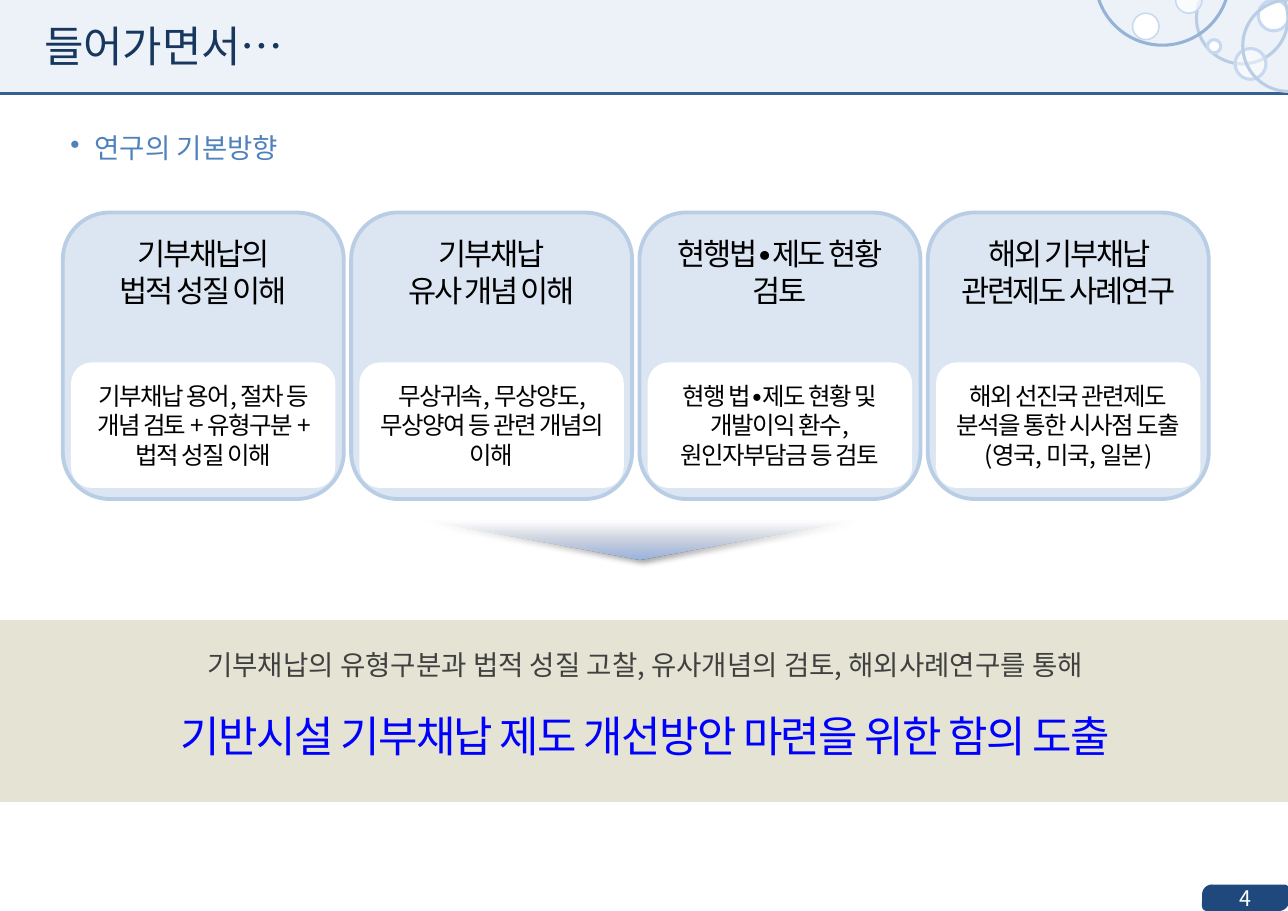
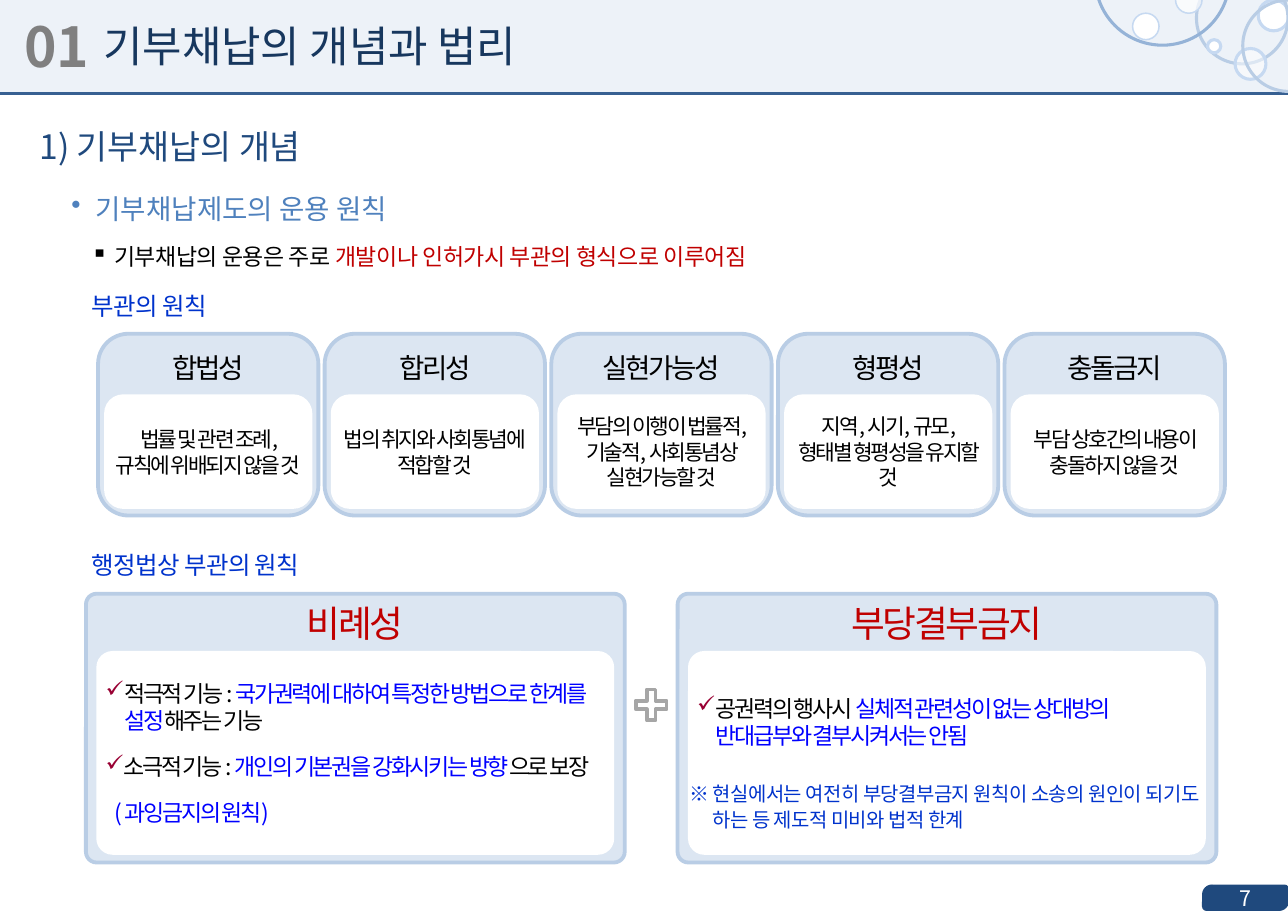
from pptx import Presentation
from pptx.dml.color import RGBColor
from pptx.enum.shapes import MSO_CONNECTOR, MSO_SHAPE
from pptx.enum.text import MSO_ANCHOR, PP_ALIGN
from pptx.oxml import parse_xml
from pptx.oxml.ns import qn
from pptx.util import Inches, Pt
from lxml import etree

RECT, ROUND, OVAL = MSO_SHAPE.RECTANGLE, MSO_SHAPE.ROUNDED_RECTANGLE, MSO_SHAPE.OVAL
BADGE, PLUS = MSO_SHAPE.ROUND_2_DIAG_RECTANGLE, MSO_SHAPE.CROSS
WEDGE, STRAIGHT = MSO_SHAPE.FLOWCHART_EXTRACT, MSO_CONNECTOR.STRAIGHT
TOP, MID = MSO_ANCHOR.TOP, MSO_ANCHOR.MIDDLE
LEFT, CENTER, JUST = PP_ALIGN.LEFT, PP_ALIGN.CENTER, PP_ALIGN.JUSTIFY

W, H = 11.69, 8.27
FONT = "Noto Sans CJK KR"
NS = "http://schemas.openxmlformats.org/drawingml/2006/main"
NAVY, DEEP, MILD = "17375E", "1F497D", "4F81BD"
PALE, EDGE, RING = "DCE6F2", "B9CDE5", "C6D9F1"
WHITE, BLACK, RED, BLUE, ROYAL = "FFFFFF", "000000", "C00000", "0000FF", "0033CC"

# Header rings: left, top, diameter, fill, opacity, line, weight
RINGS = [
    (11.42, 0, 0.28, WHITE, 100, RING, 2),
    (10.86, -0.25, 0.83, None, 100, EDGE, 2),
    (10.96, 0.36, 0.12, WHITE, 100, RING, 2),
    (11.21, 0.44, 0.28, WHITE, 50, RING, 2),
    (10.28, 0.12, 0.24, WHITE, 100, RING, 1),
    (10.67, -0.12, 0.24, WHITE, 70, RING, 1),
    (11.28, 0, 0.83, None, 100, EDGE, 2),
    (9.94, -0.81, 1.22, None, 100, "95B3D7", 2),
]

# Cards: heading paragraphs, body paragraphs
STUDY = [
    (["기부채납의", "법적 성질 이해"],
     ["기부채납 용어, 절차 등 개념 검토 + 유형구분 + 법적 성질 이해"]),
    (["기부채납", "유사 개념 이해"],
     ["무상귀속, 무상양도, 무상양여 등 관련 개념의 이해"]),
    (["현행법∙제도 현황", "검토"],
     ["현행 법∙제도 현황 및", "개발이익 환수,", "원인자부담금 등 검토"]),
    (["해외 기부채납 관련제도 사례연구"],
     ["해외 선진국 관련제도", "분석을 통한 시사점 도출", "(영국, 미국, 일본)"]),
]
RULES = [
    (["합법성"], ["법률 및 관련 조례, 규칙에 위배되지 않을 것"]),
    (["합리성"], ["법의 취지와 사회통념에", "적합할 것"]),
    (["실현가능성"], ["부담의 이행이 법률적, 기술적, 사회통념상 실현가능할 것"]),
    (["형평성"], ["지역, 시기, 규모, 형태별 형평성을 유지할 것"]),
    (["충돌금지"], ["부담 상호간의 내용이 충돌하지 않을 것"]),
]
TICK = dict(bullet="✓", tint="990033")
LAWS = [
    (["비례성"], [
        dict(TICK, hang=0.17, after=12, runs=[
            ("적극적 기능 : ", None),
            ("국가권력에 대하여 특정한 방법으로 한계를 설정", BLUE),
            ("해주는 기능", None)]),
        dict(TICK, after=12, runs=[
            ("소극적 기능 : ", None),
            ("개인의 기본권을 강화시키는 방향", BLUE),
            ("으로 보장", None)]),
        dict(left=0.08, after=12, color=BLUE, runs="( 과잉금지의 원칙)")]),
    (["부당결부금지"], [
        dict(TICK, hang=0.17, after=6, runs=[
            ("공권력의 행사시 ", None),
            ("실체적 관련성이 없는 상대방의 반대급부와 결부시켜서는 안됨", BLUE)])]),
]
NOTE = "※ 현실에서는 여전히 부당결부금지 원칙이 소송의 원인이 되기도 하는 등 제도적 미비와 법적 한계"


def rgb(code):
    return RGBColor.from_string(code)


def shape(slide, kind, box, fill=None, line=None, weight=1, alpha=100, adj=()):
    item = slide.shapes.add_shape(kind, *map(Inches, box))
    item.shadow.inherit = False
    for k, val in enumerate(adj):
        item.adjustments[k] = val
    if fill:
        item.fill.solid()
        item.fill.fore_color.rgb = rgb(fill)
        if alpha < 100:
            tone = item.element.spPr.find(qn("a:solidFill"))[0]
            etree.SubElement(tone, qn("a:alpha"), val=str(alpha * 1000))
    else:
        item.fill.background()
    if line:
        item.line.color.rgb = rgb(line)
        item.line.width = Pt(weight)
    else:
        item.line.fill.background()
    return item


def para(p, runs, size, color, space=0, align=LEFT, left=0, hang=0, gap=None,
         after=None, bullet=None, tint=None, bold=None):
    p.alignment = align
    if gap:
        p.line_spacing = gap
    if after:
        p.space_after = Pt(after)
    props = p._p.get_or_add_pPr()
    props.set("marL", str(Inches(left + hang)))
    props.set("indent", str(-Inches(hang)))
    if tint:
        etree.SubElement(etree.SubElement(props, qn("a:buClr")), qn("a:srgbClr"), val=tint)
    if bullet:
        etree.SubElement(props, qn("a:buChar"), char=bullet)
    font = p.font
    font.size, font.name, font.bold = Pt(size), FONT, bold
    font.color.rgb = rgb(color)
    base = props.find(qn("a:defRPr"))
    base.set("spc", str(round(space * 100)))
    etree.SubElement(base, qn("a:ea"), typeface=FONT)
    for words, own in [(runs, None)] if isinstance(runs, str) else runs:
        run = p.add_run()
        run.text = words
        if own:
            run.font.color.rgb = rgb(own)


def write(item, paras, inset=(0.1, 0.05, 0.1, 0.05), anchor=TOP, **base):
    """Each paragraph is a string or a dict that overrides the base style."""
    frame = item.text_frame
    frame.word_wrap = True
    frame.vertical_anchor = anchor
    (frame.margin_left, frame.margin_top,
     frame.margin_right, frame.margin_bottom) = map(Inches, inset)
    for k, own in enumerate(paras):
        p = frame.add_paragraph() if k else frame.paragraphs[0]
        para(p, **{**base, **(dict(runs=own) if isinstance(own, str) else own)})


def label(slide, box, *paras, **style):
    write(slide.shapes.add_textbox(*map(Inches, box)), paras, **style)


def point(slide, x, y, words):
    label(slide, (x, y, 6, 0.4), words, size=18, color=MILD, bullet="•", hang=0.22)


def cards(slide, items, x, y, step, size, inner, foot, head, body,
          pad=0.08, adj=((), ()), insets=None, anchors=None):
    """A row of cards, each with a white panel centred near its lower edge."""
    (w, h), (iw, ih) = size, inner
    for k, (title, texts) in enumerate(items):
        left = x + k * step
        card = shape(slide, ROUND, (left, y, w, h), PALE, EDGE, 2.5, adj=adj[0])
        write(card, title, (0.04, pad, 0.04, 0.05), color=head[1], size=head[0],
              space=-1.5, align=CENTER)
        panel = shape(slide, ROUND, (left + (w - iw) / 2, y + h - foot - ih, iw, ih),
                      WHITE, adj=adj[1])
        top = insets[k] if insets else 0.05
        write(panel, texts, (0.04, top, 0.04, 0.05), anchors[k] if anchors else MID,
              color=BLACK, **body)


def master(slide, layout):
    """Draw the shared header once and move it to the layout."""
    for hold in list(layout.placeholders):
        layout.shapes.element.remove(hold.element)
    shape(slide, RECT, (0, 0, W, 0.84), PALE, alpha=50)
    rule = slide.shapes.add_connector(STRAIGHT, *map(Inches, (0, 0.85, W, 0.85)))
    rule.line.color.rgb = rgb("376092")
    rule.line.width = Pt(1.5)
    etree.SubElement(rule.element.spPr, qn("a:effectLst"))
    for x, y, d, fill, alpha, line, weight in RINGS:
        shape(slide, OVAL, (x, y, d, d), fill, line, weight, alpha)
    shape(slide, RECT, (0, 0.88, W, H - 0.88), WHITE)
    for part in list(slide.shapes):
        layout.shapes.element.append(part.element)


def frame(slide, title, x, page):
    label(slide, (x, 0.14, 8, 0.54), title, inset=(0.07, 0.04, 0.07, 0.04),
          size=28, color=NAVY)
    badge = shape(slide, BADGE, (10.91, 8.03, 0.79, 0.24), DEEP, adj=(0.38, 0.17))
    write(badge, [page], anchor=MID, size=14, color=WHITE, align=CENTER)


def wedge(slide):
    item = shape(slide, WEDGE, (3.8, 4.72, 4.02, 0.36), WHITE)
    item.rotation = 180
    stops = "".join(
        f'<a:gs pos="{pos}000"><a:srgbClr val="{tone}"><a:alpha val="{alpha}000"/>'
        "</a:srgbClr></a:gs>"
        for pos, tone, alpha in [(0, "9AB5E4", 100), (50, "C2D1ED", 50), (100, "E1E8F5", 0)])
    props = item.element.spPr
    props.replace(props.find(qn("a:solidFill")), parse_xml(
        f'<a:gradFill xmlns:a="{NS}" rotWithShape="1"><a:gsLst>{stops}</a:gsLst>'
        '<a:lin ang="5400000" scaled="0"/></a:gradFill>'))
    props.find(qn("a:effectLst")).append(parse_xml(
        f'<a:outerShdw xmlns:a="{NS}" blurRad="{Pt(4)}" dist="{Pt(3)}" dir="2700000" '
        'algn="tl" rotWithShape="0"><a:srgbClr val="000000"><a:alpha val="40000"/>'
        "</a:srgbClr></a:outerShdw>"))


def intro(slide):
    frame(slide, "들어가면서…", 0.33, "4")
    point(slide, 0.54, 1.14, "연구의 기본방향")
    cards(slide, STUDY, 0.57, 1.93, 2.617, (2.55, 2.6), (2.4, 1.14), 0.1,
          (20, BLACK), dict(size=16, space=-1, align=CENTER))
    wedge(slide)
    # Conclusion band
    shape(slide, RECT, (0, 5.63, W, 1.65), "E5E3D3")
    label(slide, (0.47, 5.83, 10.77, 1.13),
          dict(runs="기부채납의 유형구분과 법적 성질 고찰, 유사개념의 검토, 해외사례연구를 통해",
               size=18, color="404040"),
          dict(runs="기반시설 기부채납 제도 개선방안 마련을 위한 함의 도출",
               size=28, color=BLUE, space=-1, gap=1.2),
          align=CENTER, after=12)


def concept(slide):
    frame(slide, "기부채납의 개념과 법리", 0.87, "7")
    label(slide, (0.12, 0.1, 0.9, 0.63), "01", anchor=MID, size=36, color="808080", bold=True)
    label(slide, (0.26, 1.09, 10.78, 0.55), "1) 기부채납의 개념", size=22, color=DEEP)
    point(slide, 0.55, 1.69, "기부채납제도의 운용 원칙")
    # Principles of collateral clauses
    lead = dict(space=-0.3, hang=0.21, gap=1.1)
    label(slide, (0.73, 2.13, 10.43, 0.43),
          dict(size=15, color=BLACK, bullet="▪", runs=[
              ("기부채납의 운용은 주로 ", None),
              ("개발이나 인허가시 부관의 형식으로 이루어짐", RED)]),
          dict(size=16, color=ROYAL, runs="부관의 원칙"),
          align=JUST, after=12, **lead)
    cards(slide, RULES, 0.89, 3.03, 2.057, (2, 1.65), (1.89, 1.04), 0.06,
          (18, BLACK), dict(size=14, space=-1.5, align=CENTER))
    # Principles in administrative law
    label(slide, (0.73, 4.92, 5, 0.4), "행정법상 부관의 원칙", size=16, color=ROYAL,
          align=JUST, after=8, **lead)
    cards(slide, LAWS, 0.78, 5.39, 5.37, (4.89, 2.44), (4.7, 1.85), 0.07,
          (24, RED), dict(size=15, space=-1.5), pad=0.04, adj=((0.04,), (0.08,)),
          insets=(0.05, 0.35), anchors=(MID, TOP))
    shape(slide, PLUS, (5.77, 6.26, 0.28, 0.28), None, "A6A6A6", 2.5, adj=(0.36,))
    label(slide, (6.16, 7.02, 4.88, 0.58), NOTE, size=13, color=ROYAL, after=8, **lead)


def main():
    deck = Presentation()
    deck.slide_width, deck.slide_height = Inches(W), Inches(H)
    blank = deck.slide_layouts[6]
    first, second = [deck.slides.add_slide(blank) for _ in range(2)]
    master(first, blank)
    intro(first)
    concept(second)
    deck.save("out.pptx")


if __name__ == "__main__":
    main()
